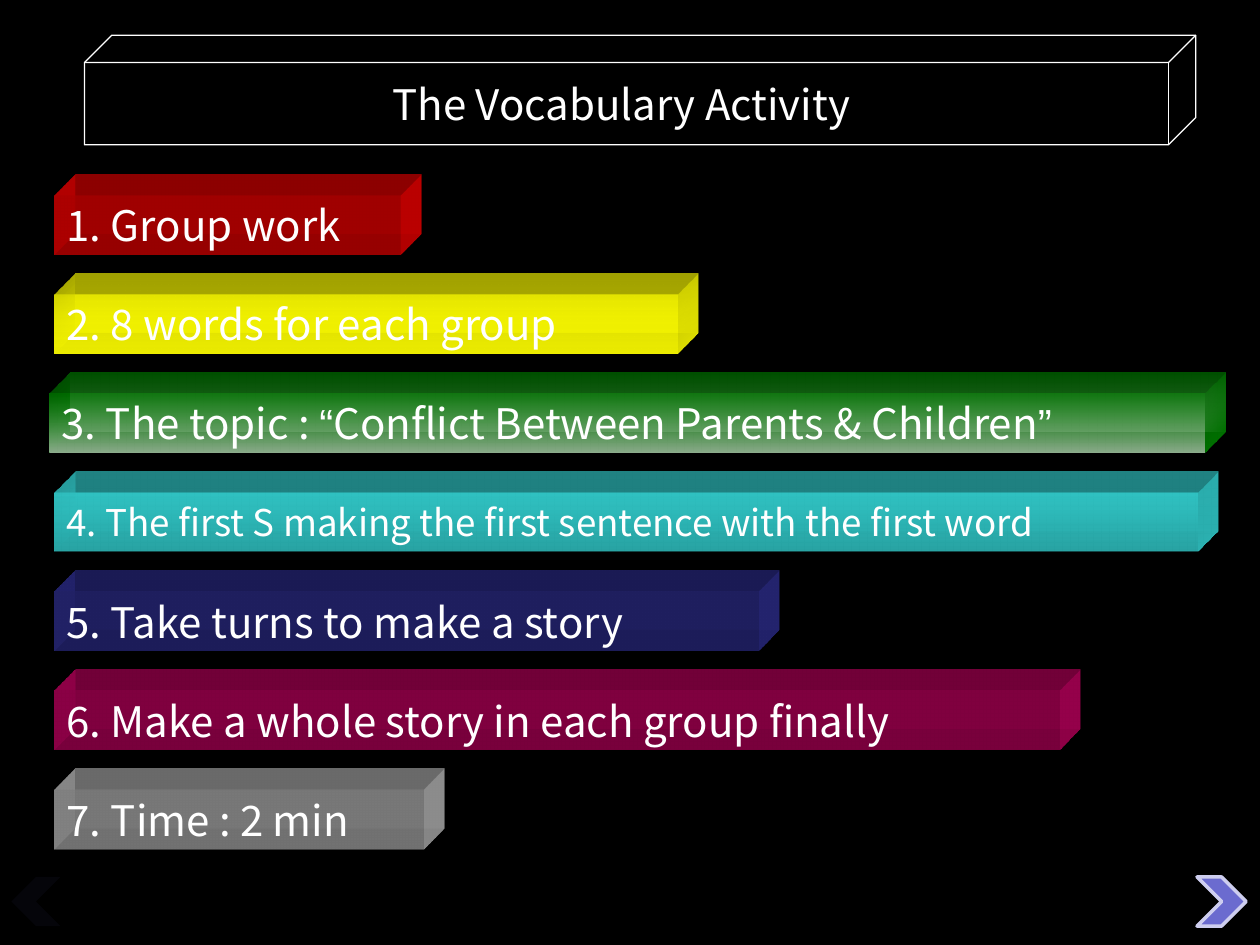
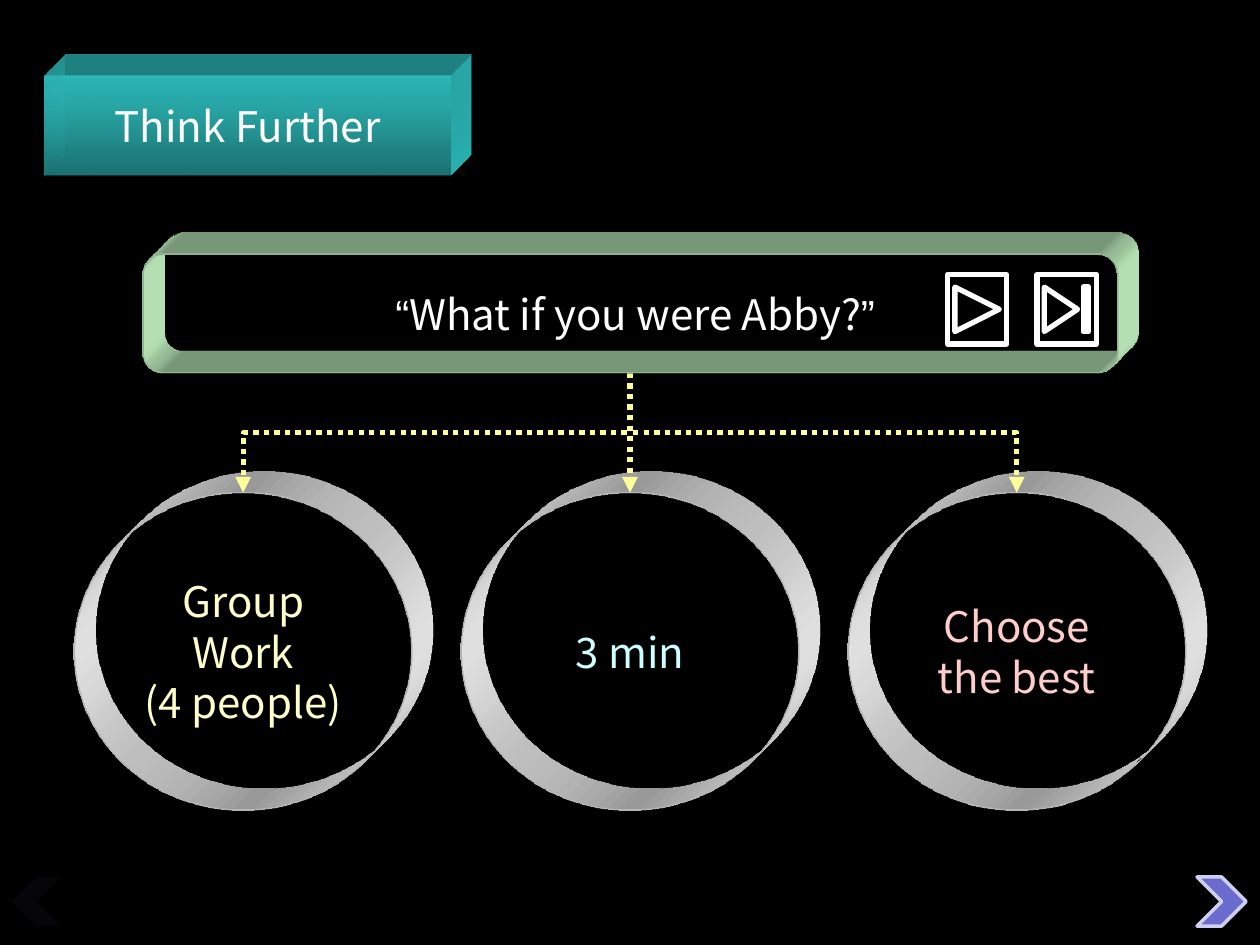
import itertools

import pptx
import pptx.dml.color
import pptx.enum.dml
import pptx.enum.shapes
import pptx.enum.text
import pptx.oxml
import pptx.oxml.ns
import pptx.util

RGB = pptx.dml.color.RGBColor
SHAPE = pptx.enum.shapes.MSO_SHAPE
CONNECTOR = pptx.enum.shapes.MSO_CONNECTOR
LEFT = pptx.enum.text.PP_ALIGN.LEFT
CENTER = pptx.enum.text.PP_ALIGN.CENTER

BLACK = RGB(0x00, 0x00, 0x00)
WHITE = RGB(0xFF, 0xFF, 0xFF)
RED = RGB(0xFF, 0x00, 0x00)
YELLOW = RGB(0xFF, 0xFF, 0x00)
DARK_YELLOW = RGB(0xEF, 0xEF, 0x00)
GREEN = RGB(0x00, 0x80, 0x00)
GRAY_GREEN = RGB(0x8F, 0xAE, 0x8F)
TEAL = RGB(0x33, 0xCC, 0xCC)
MID_TEAL = RGB(0x29, 0xA4, 0xA4)
DARK_TEAL = RGB(0x1D, 0x72, 0x72)
INDIGO = RGB(0x33, 0x33, 0x99)
MAGENTA = RGB(0xCC, 0x00, 0x66)
SILVER = RGB(0xC0, 0xC0, 0xC0)
MINT = RGB(0xCC, 0xFF, 0xCC)
CREAM = RGB(0xFF, 0xFF, 0xCC)
ICE = RGB(0xCC, 0xFF, 0xFF)
PINK = RGB(0xFF, 0xCC, 0xCC)
ARROW = RGB(0xFF, 0xFF, 0x99)
NAV = RGB(0x6B, 0x6B, 0xCF)
NAV_EDGE = RGB(0xCE, 0xCE, 0xEF)
NAV_OFF = RGB(0x05, 0x05, 0x0A)

FONT = "Noto Sans CJK KR"
QUOTE_FONT = "Arial"
QUOTES = "“”"
COLUMNS, ROWS = 100, 75
WIDTH, HEIGHT = pptx.util.Inches(10), pptx.util.Inches(7.5)


def col(n):
    """Return n grid columns as a length."""
    return round(WIDTH * n / COLUMNS)


def row(n):
    """Return n grid rows as a length."""
    return round(HEIGHT * n / ROWS)


def add_box(shapes, kind, box, colors=(), alpha=100, line=None, width=1):
    """Add a preset shape with a plain or vertical gradient fill."""
    x, y, w, h = box
    sp = shapes.add_shape(kind, col(x), row(y), col(w), row(h))
    sp.shadow.inherit = False
    if len(colors) == 2:
        sp.fill.gradient()
        sp.fill.gradient_angle = 270
        for stop, color in zip(sp.fill.gradient_stops, colors):
            stop.color.rgb = color
    elif colors:
        sp.fill.solid()
        sp.fill.fore_color.rgb = colors[0]
    else:
        sp.fill.background()
    if alpha < 100:
        first = next(sp._element.spPr.iter(pptx.oxml.ns.qn("a:srgbClr")))
        pptx.oxml.ns.qn("a:alpha")
        first.append(pptx.oxml.parse_xml(
            f'<a:alpha {pptx.oxml.ns.nsdecls("a")} val="{alpha * 1000}"/>'))
    if line is None:
        sp.line.fill.background()
    else:
        sp.line.color.rgb = line
        sp.line.width = pptx.util.Pt(width)
    return sp


def extrude(sp, color):
    """Give a shape an oblique depth toward the top right."""
    ns = pptx.oxml.ns.nsdecls("a")
    for xml in (
        f'<a:scene3d {ns}><a:camera prst="legacyObliqueTopRight"/>'
        '<a:lightRig rig="legacyFlat3" dir="b"/></a:scene3d>',
        f'<a:sp3d {ns} extrusionH="430200" prstMaterial="legacyMatte">'
        f'<a:extrusionClr><a:srgbClr val="{color}"/></a:extrusionClr></a:sp3d>',
    ):
        sp._element.spPr.append(pptx.oxml.parse_xml(xml))


def write(sp, lines, color=WHITE, size=24, align=CENTER, wrap=False):
    """Write paragraphs in a shape, with quotation marks in their own font."""
    tf = sp.text_frame
    tf.word_wrap = wrap
    tf.vertical_anchor = pptx.enum.text.MSO_ANCHOR.MIDDLE
    for i, line in enumerate(lines):
        p = tf.add_paragraph() if i else tf.paragraphs[0]
        p.alignment = align
        for quoted, chars in itertools.groupby(line, lambda c: c in QUOTES):
            r = p.add_run()
            r.text = "".join(chars)
            r.font.name = QUOTE_FONT if quoted else FONT
            r.font.size = pptx.util.Pt(size)
            r.font.color.rgb = color


def add_block(s, box, text, colors, alpha, size=24, align=LEFT):
    """Add a translucent extruded bar with one line of text."""
    sp = add_box(s.shapes, SHAPE.RECTANGLE, box, colors, alpha)
    extrude(sp, colors[0])
    write(sp, [text], size=size, align=align)


def add_navigation(s, box):
    """Add a dimmed back chevron and a lit forward chevron at the ends of a box."""
    x, y, w, h = box
    back = add_box(s.shapes, SHAPE.CHEVRON, (x, y, h, h), [NAV_OFF])
    back.rotation = 180
    add_box(s.shapes, SHAPE.CHEVRON, (x + w - h, y, h, h), [NAV], line=NAV_EDGE, width=2)


def add_steps(s, box, steps):
    """Stack the numbered step bars at equal gaps in a box."""
    x, y, w, h = box
    bar_h = 4.7
    pitch = (h - bar_h) / (len(steps) - 1)
    for i, (text, share, colors, alpha, size, shift) in enumerate(steps):
        add_block(s, (x + shift, y + i * pitch, w * share, bar_h), text, colors, alpha, size)


def add_question(s, box, text):
    """Add the framed question with its two playback buttons."""
    x, y, w, h = box
    shapes = s.shapes.add_group_shape().shapes
    frame = add_box(shapes, SHAPE.ROUNDED_RECTANGLE, box, line=MINT)
    extrude(frame, MINT)
    write(frame, [text])
    frame.text_frame.margin_left = col(1.8)
    for kind, offset in ((SHAPE.ACTION_BUTTON_END, 70.9),
                         (SHAPE.ACTION_BUTTON_FORWARD_OR_NEXT, 63.8)):
        add_box(shapes, kind, (x + offset, y + 1.6, 4.7, 5.5), [BLACK], line=WHITE, width=3)


def add_rings(s, box, rings):
    """Spread extruded rings with text across a box and return their centres."""
    x, y, w, h = box
    ring_w = 26.8
    pitch = (w - ring_w) / (len(rings) - 1)
    for i, (lines, color) in enumerate(rings):
        sp = add_box(s.shapes, SHAPE.OVAL, (x + i * pitch, y, ring_w, h), line=WHITE)
        extrude(sp, WHITE)
        write(sp, lines, color, wrap=True)
    return [x + i * pitch + ring_w / 2 for i in range(len(rings))]


def add_branch(s, start_x, start_y, end_x, end_y):
    """Draw a dotted arrow downward, bent halfway when the ends are not aligned."""
    if start_x == end_x:
        c = s.shapes.add_connector(CONNECTOR.STRAIGHT, col(start_x), row(start_y),
                                   col(end_x), row(end_y))
    else:
        mid_x, mid_y = (start_x + end_x) / 2, (start_y + end_y) / 2
        side = 1 if end_x > start_x else -1
        half_w, half_h = side * (end_y - start_y) / 2, abs(end_x - start_x) / 2
        c = s.shapes.add_connector(CONNECTOR.ELBOW, col(mid_x + half_w), row(mid_y - half_h),
                                   col(mid_x - half_w), row(mid_y + half_h))
        c._element.spPr.xfrm.set("rot", str((270 if side > 0 else 90) * 60000))
    c.line.color.rgb = ARROW
    c.line.width = pptx.util.Pt(3)
    c.line.dash_style = pptx.enum.dml.MSO_LINE.ROUND_DOT
    ns = pptx.oxml.ns.nsdecls("a")
    spPr = c._element.spPr
    spPr.find(pptx.oxml.ns.qn("a:ln")).append(
        pptx.oxml.parse_xml(f'<a:tailEnd {ns} type="triangle"/>'))
    spPr.append(pptx.oxml.parse_xml(f"<a:effectLst {ns}/>"))


def new_slide(prs):
    """Add a blank black slide with navigation."""
    s = prs.slides.add_slide(prs.slide_layouts[6])
    s.background.fill.solid()
    s.background.fill.fore_color.rgb = BLACK
    add_navigation(s, (0.9, 69.6, 98, 3.9))
    return s


def build_activity(prs):
    """Build the slide of activity steps."""
    s = new_slide(prs)
    title = add_box(s.shapes, SHAPE.CUBE, (6.7, 2.8, 88.2, 8.7), line=WHITE, width=0.75)
    write(title, ["The Vocabulary Activity"])
    title.text_frame.margin_right = col(1.8)
    add_steps(s, (4.3, 15.5, 91.7, 51.9), [
        ("1. Group work", 0.3, [RED], 69, 24, 0),
        ("2. 8 words for each group", 0.54, [YELLOW, DARK_YELLOW], 64, 24, 0),
        ("3. The topic : “Conflict Between Parents & Children”", 1,
         [GREEN, GRAY_GREEN], 59, 24, -0.4),
        ("4. The first S making the first sentence with the first word", 0.99,
         [TEAL, MID_TEAL], 79, 21, 0),
        ("5. Take turns to make a story", 0.61, [INDIGO], 69, 24, 0),
        ("6. Make a whole story in each group finally", 0.87, [MAGENTA], 69, 24, 0),
        ("7. Time : 2 min", 0.32, [SILVER], 69, 24, 0),
    ])


def build_think_further(prs):
    """Build the slide that branches from a question to three rings."""
    s = new_slide(prs)
    add_block(s, (3.5, 6, 32.3, 7.9), "Think Further", [TEAL, DARK_TEAL], 71, align=CENTER)
    question = (11.4, 20.2, 77.2, 9.4)
    rings = (5.9, 39.1, 88.2, 25.2)
    centers = add_rings(s, rings, [
        (["Group", "Work", "(4 people)"], CREAM),
        (["3 min"], ICE),
        (["Choose the best"], PINK),
    ])
    for center in centers:
        add_branch(s, centers[1], question[1] + question[3], center, rings[1])
    add_question(s, question, "“What if you were Abby?”")


def main():
    """Build and save the presentation."""
    prs = pptx.Presentation()
    prs.slide_width, prs.slide_height = WIDTH, HEIGHT
    build_activity(prs)
    build_think_further(prs)
    prs.save("out.pptx")


if __name__ == "__main__":
    main()
